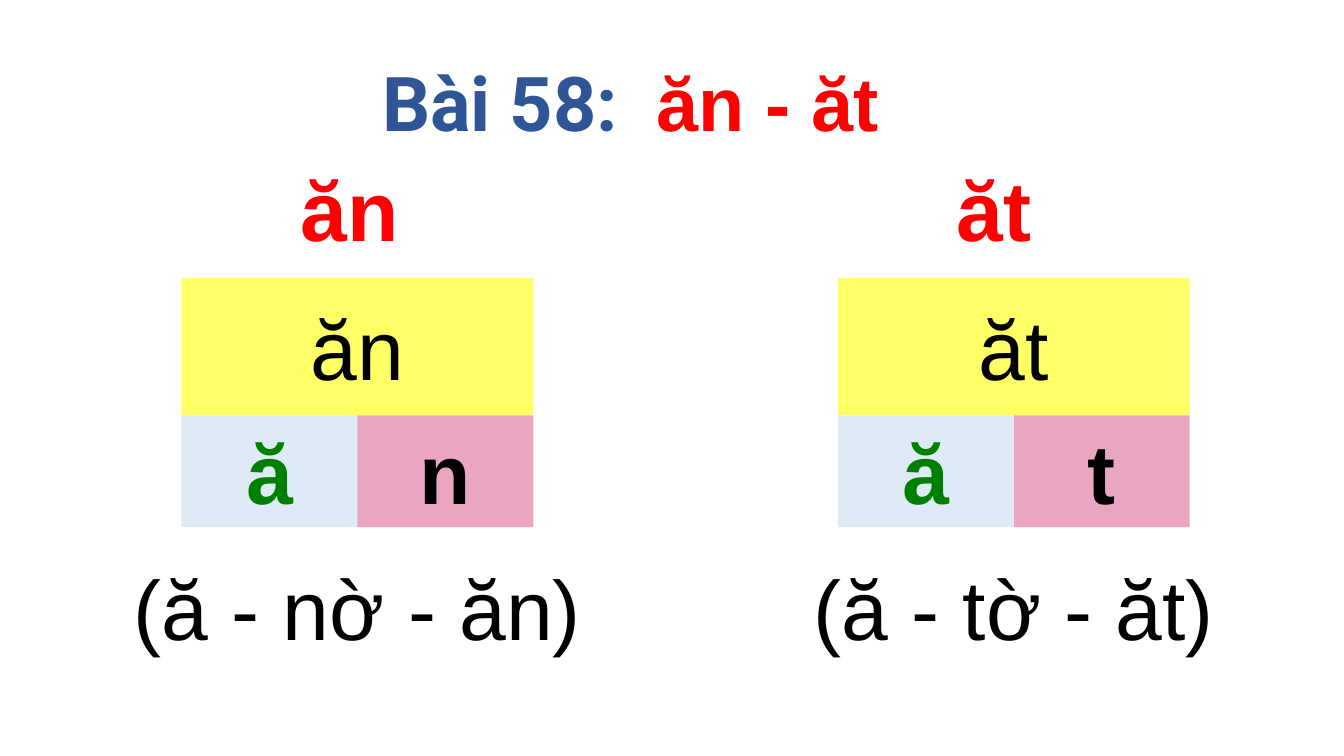
from pptx import Presentation
from pptx.dml.color import RGBColor
from pptx.enum.shapes import MSO_SHAPE as Shape
from pptx.enum.text import MSO_ANCHOR as Anchor, MSO_AUTO_SIZE as AutoSize, PP_ALIGN as Align
from pptx.oxml.ns import qn
from pptx.util import Inches, Pt
from lxml.etree import SubElement

RED = RGBColor(0xFF, 0x00, 0x00)
BLUE = RGBColor(0x2F, 0x55, 0x97)
GREEN = RGBColor(0x00, 0x80, 0x00)
BLACK = RGBColor(0x00, 0x00, 0x00)
YELLOW = RGBColor(0xFF, 0xFF, 0x66)
PALE_BLUE = RGBColor(0xDE, 0xEB, 0xF7)
PINK = RGBColor(0xE9, 0xA5, 0xC2)


class RhymeSlide:
    font = "Arial"
    title_font = "Roboto"
    size = 60
    title_size = 54

    def __init__(self, deck):
        self.page = deck.slides.add_slide(deck.slide_layouts[5])

    def add_span(self, para, text, color, bold=False, size=size, font=font):
        span = para.add_run()
        span.text = text
        span.font.name = font
        span.font.size = Pt(size)
        span.font.bold = bold
        span.font.color.rgb = color

    def title(self, lesson, rhymes, left, top, width, height, tab):
        box = self.page.shapes.title
        box.left, box.top, box.width, box.height = map(Inches, (left, top, width, height))
        frame = box.text_frame
        frame.word_wrap = True
        frame.auto_size = AutoSize.NONE
        frame.vertical_anchor = Anchor.TOP
        para = frame.paragraphs[0]
        para.alignment = Align.LEFT
        # The tab stop sets the gap between the lesson number and the rhymes
        stops = SubElement(para._p.get_or_add_pPr(), qn("a:tabLst"))
        SubElement(stops, qn("a:tab"), pos=str(Inches(tab)), algn="l")
        self.add_span(para, lesson + "\t", BLUE, True, self.title_size, self.title_font)
        self.add_span(para, rhymes, RED, True, self.title_size)

    def text(self, words, left, top, width, height, color, bold=False, align=Align.LEFT):
        box = self.page.shapes.add_textbox(*map(Inches, (left, top, width, height)))
        box.text_frame.word_wrap = True
        para = box.text_frame.paragraphs[0]
        para.alignment = align
        self.add_span(para, words, color, bold)

    def tile(self, group, letters, left, top, width, height, fill, color, bold=False):
        box = group.shapes.add_shape(Shape.RECTANGLE, *map(Inches, (left, top, width, height)))
        box.shadow.inherit = False
        box.fill.solid()
        box.fill.fore_color.rgb = fill
        box.line.fill.background()
        box.text_frame.word_wrap = True
        box.text_frame.vertical_anchor = Anchor.MIDDLE
        para = box.text_frame.paragraphs[0]
        para.alignment = Align.CENTER
        self.add_span(para, letters, color, bold)

    def rhyme(self, vowel, final, spelling, left, spelling_width):
        whole = vowel + final
        width, half = 3.49, 1.745
        # Heading
        self.text(whole, left + 1.08, 1.51, 1.85, 1.11, RED, True)
        # Whole rhyme above its two parts
        group = self.page.shapes.add_group_shape()
        self.tile(group, whole, left, 2.76, width, 1.36, YELLOW, BLACK)
        self.tile(group, vowel, left, 4.12, half, 1.11, PALE_BLUE, GREEN, True)
        self.tile(group, final, left + half, 4.12, half, 1.11, PINK, BLACK, True)
        # Spelling, centred under the tiles
        spelling_left = left + (width - spelling_width) / 2
        self.text(spelling, spelling_left, 5.47, spelling_width, 1.11, BLACK, align=Align.CENTER)


def main():
    deck = Presentation()
    deck.slide_width, deck.slide_height = Inches(13.33), Inches(7.5)
    slide = RhymeSlide(deck)
    slide.title("Bài 58:", "ăn - ăt", 3.69, 0.5, 6.59, 1.01, tab=2.72)
    slide.rhyme("ă", "n", "(ă - nờ - ăn)", left=1.8, spelling_width=5.7)
    slide.rhyme("ă", "t", "(ă - tờ - ăt)", left=8.31, spelling_width=5.25)
    deck.save("out.pptx")


if __name__ == "__main__":
    main()
